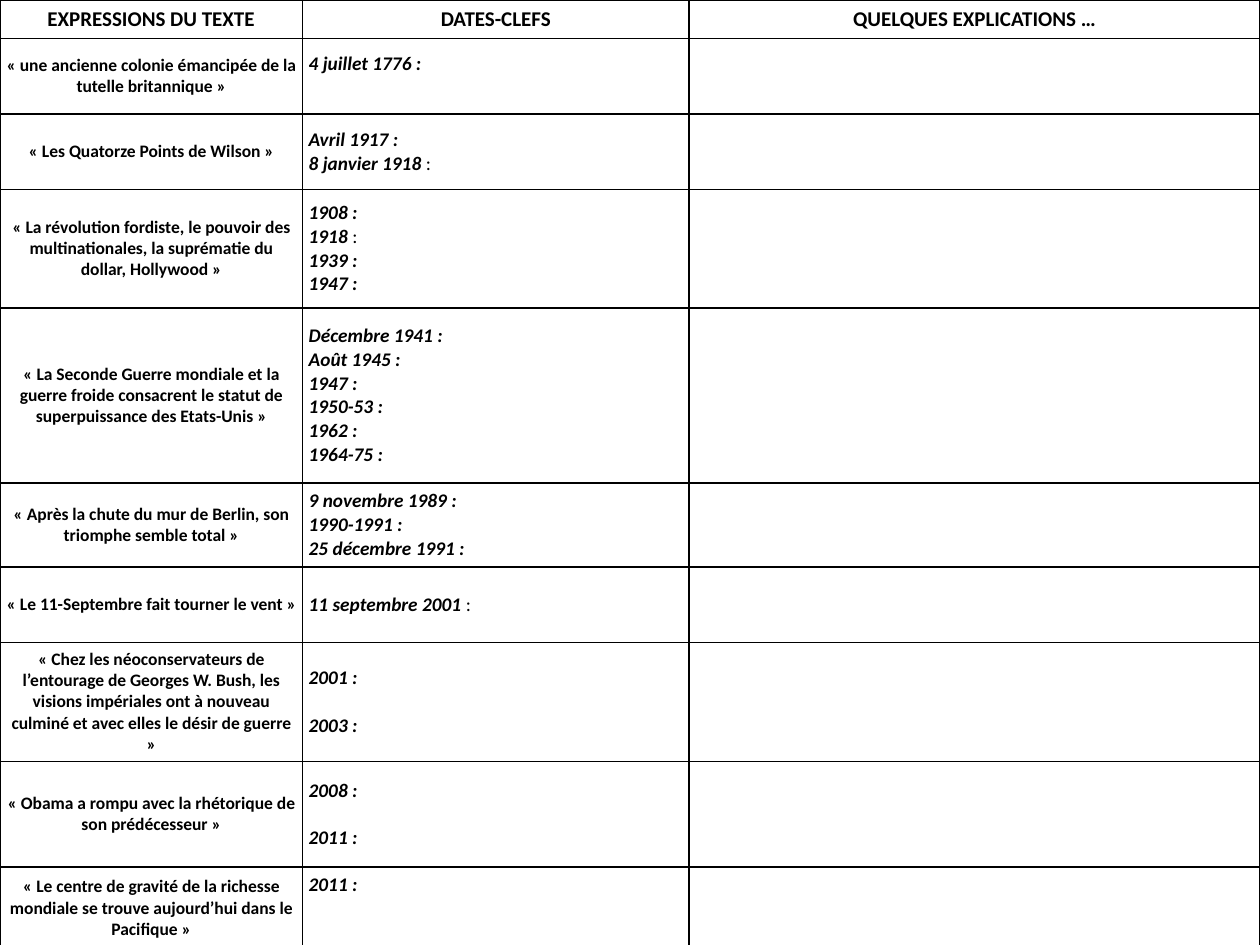
import pptx
import pptx.dml.color
import pptx.enum.text
import pptx.oxml
import pptx.oxml.ns
import pptx.util
from pptx.util import Inches

ALIGN = pptx.enum.text.PP_ALIGN
ANCHOR = pptx.enum.text.MSO_ANCHOR
BLACK, WHITE = "000000", "FFFFFF"


def color(value):
    return pptx.dml.color.RGBColor.from_string(value)


def add_text(para, text, size=11, bold=True, italic=False, align=ALIGN.LEFT):
    para.alignment = align
    span = para.add_run()
    span.text = text
    span.font.name = "Calibri"
    span.font.size = pptx.util.Pt(size)
    span.font.bold = bold
    span.font.italic = italic
    span.font.color.rgb = color(BLACK)


headings = ["EXPRESSIONS DU TEXTE", "DATES-CLEFS", "QUELQUES EXPLICATIONS …"]
column_widths = [2.4, 3.07, 4.53]
row_heights = [0.3, 0.6, 0.6, 0.94, 1.39, 0.65, 0.6, 0.94, 0.84, 0.65]
entries = [
    ("une ancienne colonie émancipée de la tutelle britannique", ["4 juillet 1776 :"]),
    ("Les Quatorze Points de Wilson", ["Avril 1917 :", "8 janvier 1918| :"]),
    ("La révolution fordiste, le pouvoir des multinationales, la suprématie du dollar, Hollywood",
     ["1908 :", "1918 |:", "1939 :", "1947 :"]),
    ("La Seconde Guerre mondiale et la guerre froide consacrent le statut de superpuissance des Etats-Unis",
     ["Décembre 1941 :", "Août 1945 :", "1947 :", "1950-53 :", "1962 :", "1964-75 :"]),
    ("Après la chute du mur de Berlin, son triomphe semble total",
     ["9 novembre 1989 :", "1990-1991 :", "25 décembre 1991 :"]),
    ("Le 11-Septembre fait tourner le vent", ["11 septembre 2001 |:"]),
    ("Chez les néoconservateurs de l’entourage de Georges W. Bush, les visions impériales "
     "ont à nouveau culminé et avec elles le désir de guerre", ["2001 :", "2003 :"]),
    ("Obama a rompu avec la rhétorique de son prédécesseur", ["2008 :", "2011 :"]),
    ("Le centre de gravité de la richesse mondiale se trouve aujourd’hui dans le Pacifique", ["2011 :"]),
]
spaced_rows = (7, 8)

deck = pptx.Presentation()
deck.slide_width = Inches(10)
deck.slide_height = Inches(7.5)
page = deck.slides.add_slide(deck.slide_layouts[6])

table = page.shapes.add_table(
    len(row_heights), len(column_widths), 0, 0, Inches(10), Inches(7.5)
).table
table.first_row = False
table.horz_banding = False
for column, width in zip(table.columns, column_widths):
    column.width = Inches(width)
for row, height in zip(table.rows, row_heights):
    row.height = Inches(height)

for cell in table.iter_cells():
    cell.margin_left = cell.margin_right = Inches(0.05)
    cell.margin_top = cell.margin_bottom = Inches(0.05)
    cell.vertical_anchor = ANCHOR.MIDDLE
    properties = cell._tc.get_or_add_tcPr()
    for side in ("lnL", "lnR", "lnT", "lnB"):
        properties.append(pptx.oxml.parse_xml(
            f'<a:{side} {pptx.oxml.ns.nsdecls("a")} w="12700"><a:solidFill>'
            f'<a:srgbClr val="{BLACK}"/></a:solidFill></a:{side}>'
        ))
    cell.fill.solid()
    cell.fill.fore_color.rgb = color(WHITE)

for index, heading in enumerate(headings):
    para = table.cell(0, index).text_frame.paragraphs[0]
    add_text(para, heading, size=12, align=ALIGN.CENTER)

for number, (quote, dates) in enumerate(entries, start=1):
    para = table.cell(number, 0).text_frame.paragraphs[0]
    add_text(para, f"« {quote} »", size=10, align=ALIGN.CENTER)
    frame = table.cell(number, 1).text_frame
    for index, date in enumerate(dates):
        para = frame.add_paragraph() if index else frame.paragraphs[0]
        if index and number in spaced_rows:
            para.space_before = pptx.util.Pt(13.4)
        label, _, plain = date.partition("|")
        add_text(para, label, italic=True)
        if plain:
            add_text(para, plain, bold=False)

table.cell(1, 1).margin_bottom = Inches(0.24)
table.cell(len(entries), 1).vertical_anchor = ANCHOR.TOP

deck.save("out.pptx")
